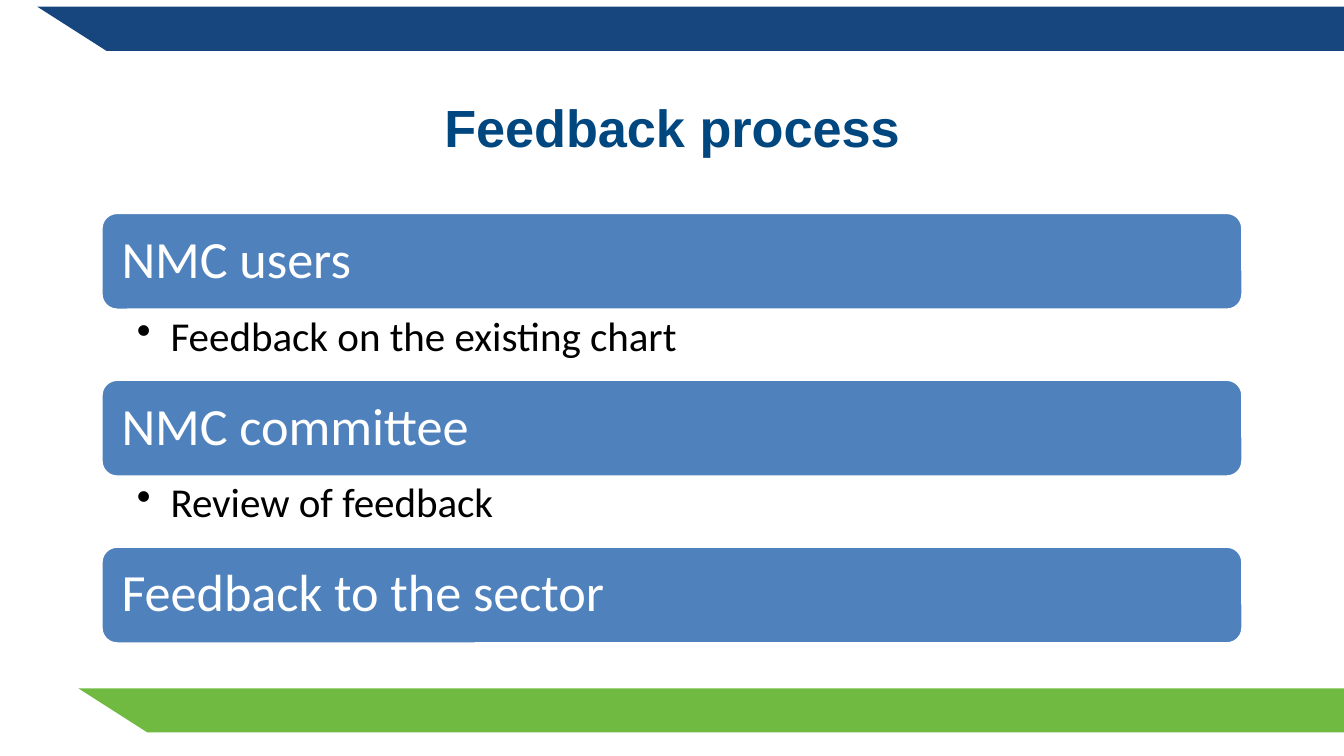
from lxml.etree import SubElement
from pptx import Presentation
from pptx.dml.color import RGBColor as RGB
from pptx.enum.shapes import MSO_SHAPE as SHAPE
from pptx.enum.text import MSO_ANCHOR as ANCHOR, PP_ALIGN as ALIGN
from pptx.oxml.ns import qn
from pptx.util import Pt

HUES = {"navy": "17467E", "green": "71BA41", "title": "00467F",
        "bar": "4F81BD", "white": "FFFFFF", "black": "000000"}


def hue(name):
    return RGB.from_string(HUES[name])


def style(para, size, name, face="Calibri", bold=False):
    font = para.runs[0].font
    font.name, font.size, font.bold = face, Pt(size), bold
    font.color.rgb = hue(name)


deck = Presentation()
deck.slide_width, deck.slide_height = Pt(720), Pt(405)
slide = deck.slides.add_slide(deck.slide_layouts[5])
shapes = slide.shapes

for left, top, name in [(42, 368.8, "green"), (20, 3.6, "navy")]:
    pen = shapes.build_freeform(Pt(left), Pt(top))
    low = top + 23.6
    pen.add_line_segments([(Pt(720), Pt(top)), (Pt(720), Pt(low)),
                           (Pt(left + 37), Pt(low))])
    band = pen.convert_to_shape()
    band.shadow.inherit = False
    band.fill.solid()
    band.fill.fore_color.rgb = hue(name)
    band.line.fill.background()

title = shapes.title
title.left, title.top, title.width, title.height = Pt(36), Pt(46), Pt(648), Pt(43.2)
title.text_frame.text = "Feedback process"
title.text_frame.vertical_anchor = ANCHOR.MIDDLE
para = title.text_frame.paragraphs[0]
para.alignment = ALIGN.CENTER
style(para, 28, "title", "Arial", True)

steps = [("NMC users", "Feedback on the existing chart"),
         ("NMC committee", "Review of feedback"),
         ("Feedback to the sector", None)]
left, wide, tall, pitch = 54, 612, 52.6, 89.4

for i, (head, note) in enumerate(steps):
    top = 113.7 + i * pitch
    bar = shapes.add_shape(SHAPE.ROUNDED_RECTANGLE, Pt(left), Pt(top), Pt(wide), Pt(tall))
    bar.shadow.inherit = False
    bar.fill.solid()
    bar.fill.fore_color.rgb = hue("bar")
    bar.line.color.rgb = hue("white")
    bar.line.width = Pt(2)
    frame = bar.text_frame
    frame.text = head
    frame.word_wrap = True
    frame.vertical_anchor = ANCHOR.MIDDLE
    frame.margin_left = frame.margin_right = Pt(8.6)
    para = frame.paragraphs[0]
    para.alignment = ALIGN.LEFT
    para.line_spacing = 0.9
    style(para, 28, "white")

    if note:
        box = shapes.add_textbox(Pt(left), Pt(top + tall), Pt(wide), Pt(pitch - tall))
        frame = box.text_frame
        frame.text = note
        frame.word_wrap = True
        frame.margin_left, frame.margin_right = Pt(19.4), Pt(15.8)
        frame.margin_top = frame.margin_bottom = Pt(2.8)
        para = frame.paragraphs[0]
        para.level = 1
        para.line_spacing = 0.9
        props = para._p.get_or_add_pPr()
        props.set("marL", str(Pt(18)))
        props.set("indent", str(-Pt(18)))
        SubElement(props, qn("a:buChar")).set("char", "•")
        style(para, 22, "black")

deck.save("out.pptx")
